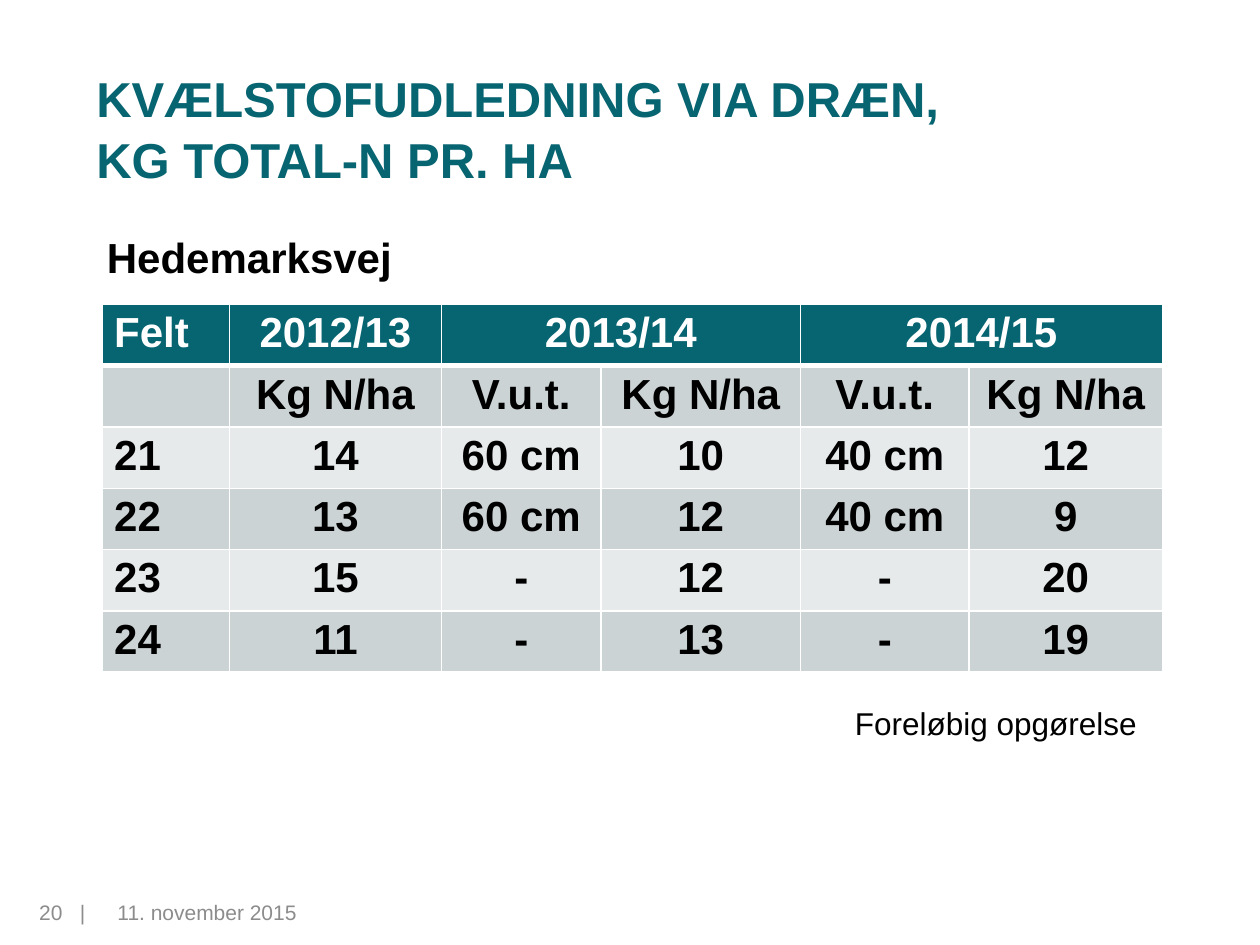
from lxml import etree
from pptx import Presentation
from pptx.dml.color import RGBColor
from pptx.enum import text as t
from pptx.oxml import ns
from pptx.util import Pt

TEAL, WHITE, BLACK, GREY = "076471", "FFFFFF", "000000", "8C8C8C"
BANDS = ("E7EAEB", "CCD3D5")
COLS = (72.7, 121, 91.4, 113.8, 96.5, 110.4)
ROWS = (
    ("Felt", "2012/13", "2013/14", "", "2014/15", ""),
    ("", "Kg N/ha", "V.u.t.", "Kg N/ha", "V.u.t.", "Kg N/ha"),
    ("21", "14", "60 cm", "10", "40 cm", "12"),
    ("22", "13", "60 cm", "12", "40 cm", "9"),
    ("23", "15", "-", "12", "-", "20"),
    ("24", "11", "-", "13", "-", "19"),
)


def paint(target, color):
    """Set a solid colour on a fill or a font."""
    if hasattr(target, "solid"):
        target.solid()
        target.fore_color.rgb = RGBColor.from_string(color)
    else:
        target.color.rgb = RGBColor.from_string(color)


def style(para, size, color, bold=False):
    """Format every run of a paragraph."""
    for run in para.runs:
        run.font.name = "Arial"
        run.font.size = Pt(size)
        run.font.bold = bold
        paint(run.font, color)


def label(slide, box, words, size, color, bold=False, wrap=True):
    """Add a text box and return it."""
    shape = slide.shapes.add_textbox(*map(Pt, box))
    frame = shape.text_frame
    frame.text = words
    frame.word_wrap = wrap
    if not wrap:
        frame.auto_size = t.MSO_AUTO_SIZE.SHAPE_TO_FIT_TEXT
    style(frame.paragraphs[0], size, color, bold)
    return shape


def title(slide, box):
    """Place the two-line heading."""
    words = "KVÆLSTOFUDLEDNING VIA DRÆN,\vKG TOTAL-N PR. HA"
    frame = label(slide, box, words, 28, TEAL, True).text_frame
    frame.vertical_anchor = t.MSO_ANCHOR.MIDDLE
    frame.paragraphs[0].line_spacing = 1.05


def edge(cell, side, width):
    """Draw one white cell border."""
    props = cell._tc.get_or_add_tcPr()
    line = etree.SubElement(props, ns.qn("a:ln" + side), w=str(Pt(width)))
    fill = etree.SubElement(line, ns.qn("a:solidFill"))
    etree.SubElement(fill, ns.qn("a:srgbClr"), val=WHITE)


def grid(slide, left, top, high):
    """Place the table of nitrogen loss per field."""
    box = (left, top, sum(COLS), high * len(ROWS))
    table = slide.shapes.add_table(len(ROWS), len(COLS), *map(Pt, box)).table
    for col, wide in zip(table.columns, COLS):
        col.width = Pt(wide)
    for r, row in enumerate(ROWS):
        table.rows[r].height = Pt(high)
        for c, words in enumerate(row):
            cell = table.cell(r, c)
            cell.margin_left = cell.margin_right = Pt(6.8)
            cell.margin_top = cell.margin_bottom = Pt(3.1)
            for side in "LRTB":
                thick = (r, side) in ((0, "B"), (1, "T"))
                edge(cell, side, 3 if thick else 1)
            paint(cell.fill, BANDS[r % 2] if r else TEAL)
            cell.text = words
            para = cell.text_frame.paragraphs[0]
            if c:
                para.alignment = t.PP_ALIGN.CENTER
            style(para, 24, BLACK if r else WHITE, True)
    for c in (2, 4):
        table.cell(0, c).merge(table.cell(0, c + 1))


def footer(slide, left, top, high):
    """Place the page number, its divider and the date."""
    label(slide, (left + 60, top, 168, high), "11. november 2015", 12, GREY)
    page = label(slide, (left, top, 56, high), "20\t|", 12, GREY)
    page.text_frame.margin_left = Pt(22.4)
    props = page.text_frame.paragraphs[0]._p.get_or_add_pPr()
    tabs = etree.SubElement(props, ns.qn("a:tabLst"))
    etree.SubElement(tabs, ns.qn("a:tab"), pos=str(Pt(23.3)), algn="l")


def main():
    """Build the slide and save it."""
    deck = Presentation()
    deck.slide_width, deck.slide_height = Pt(720), Pt(540)
    slide = deck.slides.add_slide(deck.slide_layouts[6])
    title(slide, (48, 27.5, 636, 90))
    label(slide, (54, 129, 179, 36), "Hedemarksvej", 24, BLACK, True, False)
    grid(slide, 58.5, 174, 33.9)
    label(slide, (481.5, 399, 177, 29), "Foreløbig opgørelse", 18, BLACK, wrap=False)
    footer(slide, 0, 510.5, 29)
    deck.save("out.pptx")


if __name__ == "__main__":
    main()
